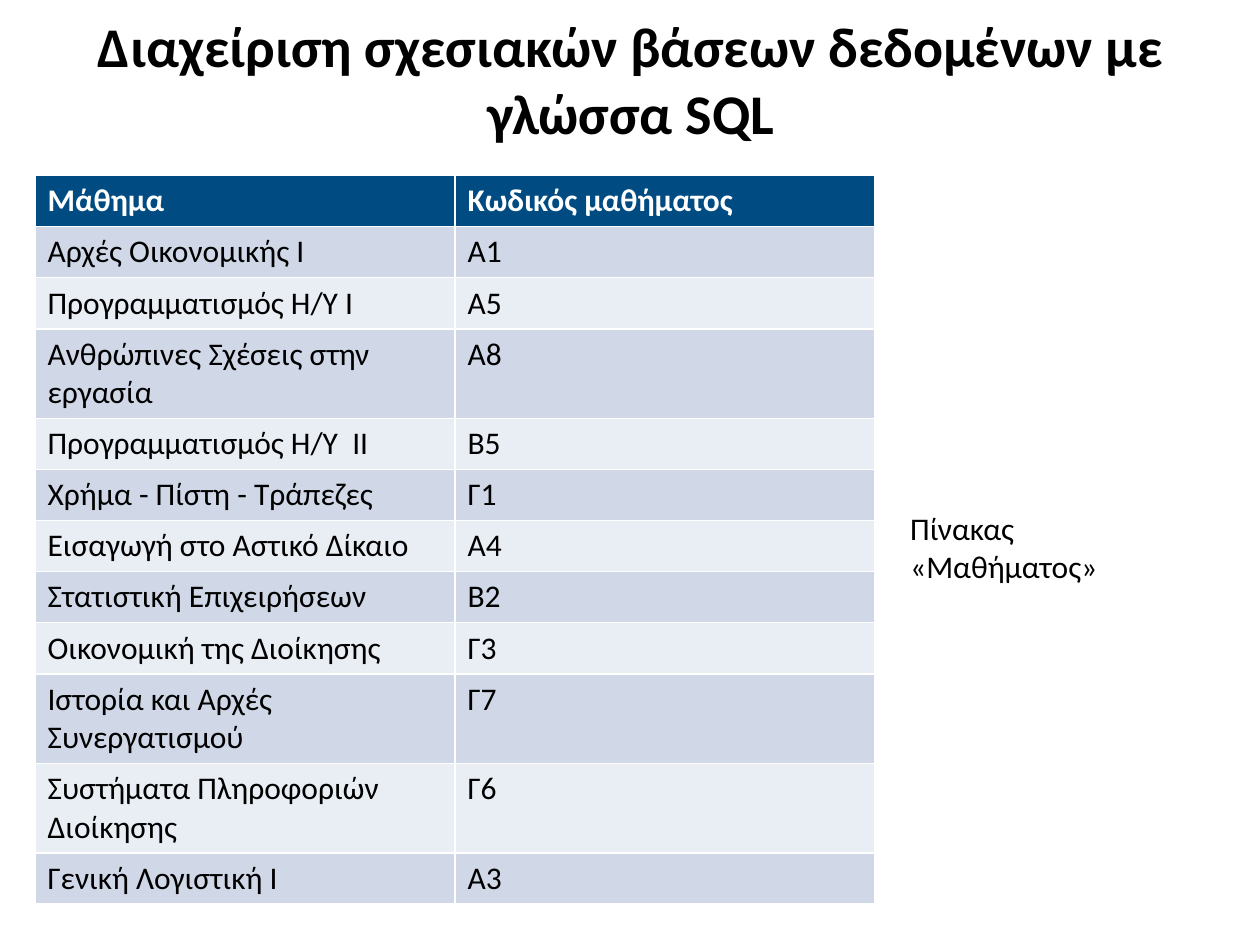
from pptx import Presentation
from pptx.dml.color import RGBColor
from pptx.enum.text import MSO_ANCHOR, PP_ALIGN
from pptx.util import Pt

FONT = "Calibri"
BLACK, WHITE = "000000", "FFFFFF"
HEADER_FILL = "004B82"
BAND_FILLS = ("D0D8E8", "E9EDF4")
ROW_HEIGHT = 29.2
COLUMN_WIDTH = 240
COURSES = [
    ("Μάθημα", "Κωδικός μαθήματος"),
    ("Αρχές Οικονομικής Ι", "Α1"),
    ("Προγραμματισμός Η/Υ Ι", "Α5"),
    ("Ανθρώπινες Σχέσεις στην εργασία", "Α8"),
    ("Προγραμματισμός Η/Υ  ΙΙ", "Β5"),
    ("Χρήμα - Πίστη - Τράπεζες", "Γ1"),
    ("Εισαγωγή στο Αστικό Δίκαιο", "Α4"),
    ("Στατιστική Επιχειρήσεων", "Β2"),
    ("Οικονομική της Διοίκησης", "Γ3"),
    ("Ιστορία και Αρχές Συνεργατισμού", "Γ7"),
    ("Συστήματα Πληροφοριών Διοίκησης", "Γ6"),
    ("Γενική Λογιστική Ι", "Α3"),
]


def color(value):
    """Return the colour for a hex string."""
    return RGBColor.from_string(value)


def add_run(paragraph, text, size, font_color=BLACK, bold=False):
    """Append one formatted run to a paragraph."""
    run = paragraph.add_run()
    run.text = text
    run.font.name = FONT
    run.font.size = Pt(size)
    run.font.bold = bold
    run.font.color.rgb = color(font_color)


def set_title(slide, text):
    """Place and fill the title placeholder."""
    title = slide.shapes.title
    title.left, title.top, title.width, title.height = Pt(36.5), Pt(9.4), Pt(648), Pt(71.3)
    title.text_frame.vertical_anchor = MSO_ANCHOR.MIDDLE
    paragraph = title.text_frame.paragraphs[0]
    paragraph.alignment = PP_ALIGN.CENTER
    add_run(paragraph, text, 32, bold=True)


def add_course_table(slide, left, top):
    """Add the table of courses with a header and alternating bands."""
    columns = len(COURSES[0])
    frame = slide.shapes.add_table(
        len(COURSES), columns, Pt(left), Pt(top),
        Pt(COLUMN_WIDTH * columns), Pt(ROW_HEIGHT * len(COURSES)))
    table = frame.table
    for row_index, course in enumerate(COURSES):
        header = row_index == 0
        fill = HEADER_FILL if header else BAND_FILLS[(row_index - 1) % 2]
        for column_index, text in enumerate(course):
            cell = table.cell(row_index, column_index)
            cell.fill.solid()
            cell.fill.fore_color.rgb = color(fill)
            add_run(cell.text_frame.paragraphs[0], text, 18,
                    WHITE if header else BLACK, header)


def add_caption(slide, text, left, top, width, height):
    """Add a wrapped caption."""
    box = slide.shapes.add_textbox(Pt(left), Pt(top), Pt(width), Pt(height))
    box.text_frame.word_wrap = True
    add_run(box.text_frame.paragraphs[0], text, 18)


def main():
    """Build and save the slide."""
    presentation = Presentation()
    presentation.slide_width, presentation.slide_height = Pt(720), Pt(540)
    slide = presentation.slides.add_slide(presentation.slide_layouts[5])
    set_title(slide, "Διαχείριση σχεσιακών βάσεων δεδομένων με γλώσσα SQL")
    add_course_table(slide, 20, 100.3)
    add_caption(slide, "Πίνακας «Μαθήματος»", 513, 287.5, 142, 51)
    presentation.save("out.pptx")


if __name__ == "__main__":
    main()
